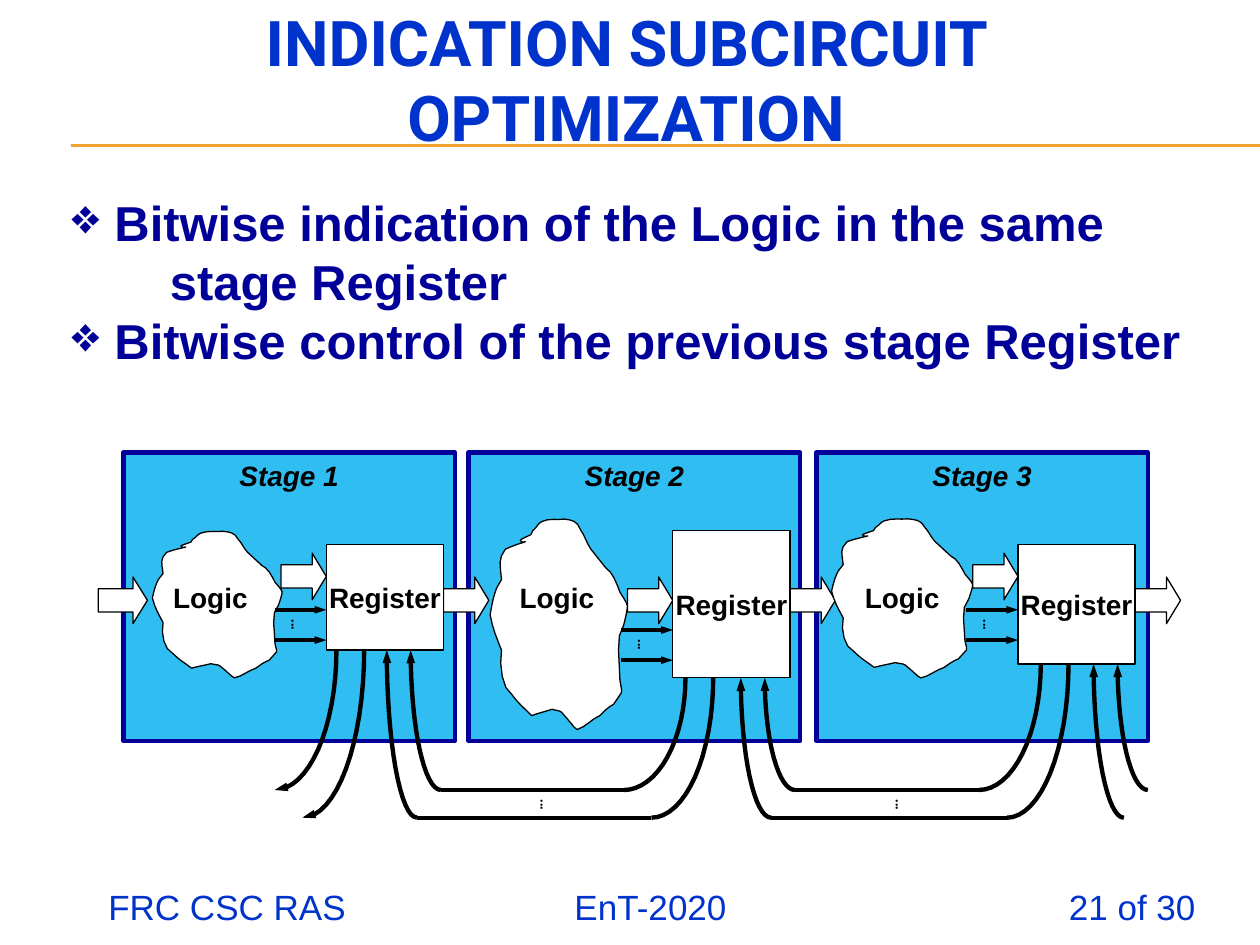
from dataclasses import dataclass
from itertools import pairwise
from math import cos, pi, sin

from lxml.etree import SubElement
from pptx import Presentation
from pptx.dml.color import RGBColor
from pptx.enum.shapes import MSO_CONNECTOR, MSO_SHAPE
from pptx.enum.text import MSO_ANCHOR, PP_ALIGN
from pptx.oxml.ns import qn
from pptx.util import Inches, Pt

Point = tuple[float, float]
Box = tuple[float, float, float, float]

BLACK, WHITE, NAVY, BLUE = "000000", "FFFFFF", "000099", "0033CC"
INNER_Y, OUTER_Y = 6.27, 6.49
OUT_REACH, IN_REACH = 0.49, 0.24
OUT_GAP, IN_GAP = 0.22, 0.19
REGISTER_WIDTH, ARROW_WIDTH, ARROW_HEIGHT = 0.93, 0.36, 0.37
TIGHT = (0.02, 0.01)

CLOUD_BOX = (3.89, 4.11, 1.09, 1.68)
CLOUD_START = (4.17, 4.3)
CLOUD_CURVES = [
    (4.11, 4.32, 4.07, 4.33, 4.01, 4.36), (3.95, 4.44, 3.97, 4.48, 3.98, 4.6),
    (3.96, 4.64, 3.94, 4.66, 3.93, 4.7), (3.91, 4.75, 3.89, 4.88, 3.89, 4.88),
    (3.91, 4.99, 3.94, 5.06, 3.98, 5.16), (3.96, 5.29, 3.99, 5.47, 4.06, 5.51),
    (4.11, 5.58, 4.16, 5.62, 4.22, 5.68), (4.27, 5.66, 4.32, 5.65, 4.38, 5.63),
    (4.45, 5.65, 4.44, 5.63, 4.48, 5.68), (4.5, 5.7, 4.52, 5.73, 4.54, 5.75),
    (4.55, 5.77, 4.58, 5.79, 4.58, 5.79), (4.65, 5.77, 4.69, 5.71, 4.76, 5.68),
    (4.8, 5.64, 4.83, 5.61, 4.87, 5.59), (4.95, 5.46, 4.94, 5.53, 4.92, 5.4),
    (4.92, 5.26, 4.88, 5.05, 4.95, 4.96), (4.96, 4.92, 4.98, 4.84, 4.98, 4.81),
    (4.97, 4.77, 4.93, 4.72, 4.92, 4.7), (4.89, 4.62, 4.86, 4.54, 4.81, 4.51),
    (4.77, 4.46, 4.73, 4.41, 4.69, 4.36), (4.66, 4.32, 4.64, 4.25, 4.61, 4.21),
    (4.58, 4.13, 4.54, 4.13, 4.48, 4.12), (4.42, 4.13, 4.36, 4.11, 4.3, 4.14),
    (4.27, 4.15, 4.26, 4.19, 4.23, 4.21), (4.22, 4.22, 4.22, 4.25, 4.2, 4.25),
    (4.16, 4.27, 4.13, 4.28, 4.13, 4.29), (4.14, 4.31, 4.16, 4.3, 4.17, 4.3),
]


@dataclass
class Stage:
    name: str
    left: float
    cloud: Box
    register_left: float
    register_top: float
    register_height: float
    feed_top: float
    link_y: float
    out_x: float
    in_x: float

    @property
    def register_bottom(self) -> float:
        return self.register_top + self.register_height


STAGES = [
    Stage("Stage 1", 0.98, (1.21, 4.21, 1.03, 1.17), 2.59, 4.32, 0.84, 4.39, 4.84, 2.67, 3.07),
    Stage("Stage 2", 3.72, CLOUD_BOX, 5.34, 4.21, 1.17, 4.58, 5, 5.44, 5.88),
    Stage("Stage 3", 6.48, (6.6, 4.11, 1.12, 1.27), 8.08, 4.32, 0.95, 4.39, 4.84, 8.26, 8.68),
]


def color(value: str) -> RGBColor:
    return RGBColor.from_string(value)


def write(shape, text: str, size: float, ink: str = BLACK, font: str = "Arial",
          bold: bool = True, italic: bool = False, align=PP_ALIGN.CENTER,
          anchor=MSO_ANCHOR.MIDDLE, inset: Point = (0.1, 0.05), wrap: bool = True):
    frame = shape.text_frame
    frame.text = text
    frame.word_wrap = wrap
    frame.vertical_anchor = anchor
    frame.margin_left = frame.margin_right = Inches(inset[0])
    frame.margin_top = frame.margin_bottom = Inches(inset[1])
    for paragraph in frame.paragraphs:
        paragraph.alignment = align
        for run in paragraph.runs:
            run.font.size, run.font.name = Pt(size), font
            run.font.bold, run.font.italic = bold, italic
            run.font.color.rgb = color(ink)
    return frame


def label(slide, box: Box, text: str, size: float, **style):
    return write(slide.shapes.add_textbox(*map(Inches, box)), text, size, **style)


def block(slide, kind, box: Box, fill: str = WHITE, edge: str = BLACK, width: float = 0.75):
    shape = slide.shapes.add_shape(kind, *map(Inches, box))
    shape.shadow.inherit = False
    shape.fill.solid()
    shape.fill.fore_color.rgb = color(fill)
    shape.line.color.rgb = color(edge)
    shape.line.width = Pt(width)
    return shape


def wide_arrow(slide, left: float, top: float, width: float = ARROW_WIDTH) -> None:
    arrow = block(slide, MSO_SHAPE.RIGHT_ARROW, (left, top, width, ARROW_HEIGHT))
    arrow.adjustments[1] = 0.31


def arrowhead(shape, end: str) -> None:
    SubElement(shape.line._get_or_add_ln(), qn(f"a:{end}"), type="triangle", w="sm", len="med")


def segment(slide, start: Point, end: Point, width: float, ink: str = BLACK):
    line = slide.shapes.add_connector(MSO_CONNECTOR.STRAIGHT, *map(Inches, (*start, *end)))
    line.line.color.rgb = color(ink)
    line.line.width = Pt(width)
    SubElement(line._element.spPr, qn("a:effectLst"))
    return line


def outline(slide, points: list[Point], width: float, closed: bool):
    corners = [(Inches(x), Inches(y)) for x, y in points]
    builder = slide.shapes.build_freeform(*corners[0])
    builder.add_line_segments(corners[1:], close=closed)
    shape = builder.convert_to_shape()
    shape.shadow.inherit = False
    shape.line.color.rgb = color(BLACK)
    shape.line.width = Pt(width)
    return shape


def cloud(slide, box: Box) -> None:
    points, start = [CLOUD_START], CLOUD_START
    for ax, ay, bx, by, x, y in CLOUD_CURVES:
        for t in (0.25, 0.5, 0.75, 1):
            weights = ((1 - t) ** 3, 3 * t * (1 - t) ** 2, 3 * t * t * (1 - t), t ** 3)
            points.append((sum(w * v for w, v in zip(weights, (start[0], ax, bx, x))),
                           sum(w * v for w, v in zip(weights, (start[1], ay, by, y)))))
        start = (x, y)
    left, top, width, height = CLOUD_BOX
    scaled = [(box[0] + (x - left) / width * box[2], box[1] + (y - top) / height * box[3])
              for x, y in points]
    shape = outline(slide, scaled, 0.75, True)
    shape.fill.solid()
    shape.fill.fore_color.rgb = color(WHITE)


def bend(slide, foot: Point, top: Point, end: str = "") -> None:
    angles = [step * pi / 32 for step in range(17)]
    points = [(foot[0] + (top[0] - foot[0]) * sin(a), top[1] + (foot[1] - top[1]) * cos(a))
              for a in angles]
    shape = outline(slide, points, 2.5, False)
    shape.fill.background()
    if end:
        arrowhead(shape, end)


def dots(slide, box: Box) -> None:
    frame = label(slide, box, "...", 8, font="Times New Roman", inset=TIGHT)
    frame._txBody.bodyPr.set("vert", "vert")


def tab_stops(paragraph, *stops: tuple[float, str]) -> None:
    tabs = SubElement(paragraph._p.get_or_add_pPr(), qn("a:tabLst"))
    for position, align in stops:
        SubElement(tabs, qn("a:tab"), pos=str(Inches(position)), algn=align)


def draw_stage(slide, stage: Stage) -> None:
    register = stage.register_left
    cloud(slide, stage.cloud)
    label(slide, (register - 1.48, 4.21, 1.12, 1.06), "Logic", 16, inset=TIGHT)
    wide_arrow(slide, register - ARROW_WIDTH, stage.feed_top)
    wide_arrow(slide, register + REGISTER_WIDTH, 4.58)
    box = block(slide, MSO_SHAPE.RECTANGLE,
                (register, stage.register_top, REGISTER_WIDTH, stage.register_height))
    write(box, "Register", 16, inset=TIGHT, wrap=False)
    for y in (stage.link_y, stage.link_y + 0.24):
        arrowhead(segment(slide, (register - 0.41, y), (register, y), 2.25), "tailEnd")
    dots(slide, (register - 0.41, stage.link_y, 0.36, 0.24))
    bottom = stage.register_bottom
    out_head = "headEnd" if stage is STAGES[0] else ""
    for shift, y in ((0, INNER_Y), (OUT_GAP, OUTER_Y)):
        x = stage.out_x + shift
        bend(slide, (x - OUT_REACH, y), (x, bottom), out_head)
    for shift, y in ((0, OUTER_Y), (IN_GAP, INNER_Y)):
        x = stage.in_x + shift
        bend(slide, (x + IN_REACH, y), (x, bottom), "tailEnd")


def draw_feedback(slide, before: Stage, after: Stage) -> None:
    start, end = after.out_x - OUT_REACH, before.in_x + IN_REACH
    segment(slide, (start, INNER_Y), (end + IN_GAP, INNER_Y), 2.5)
    segment(slide, (start + OUT_GAP, OUTER_Y), (end, OUTER_Y), 2.5)
    dots(slide, (start - 0.77, 6.22, 0.31, 0.34))


def main() -> None:
    deck = Presentation()
    deck.slide_width, deck.slide_height = Inches(10), Inches(7.5)
    slide = deck.slides.add_slide(deck.slide_layouts[6])

    for y in (1.15, 1.16):
        segment(slide, (0.56, y), (10, y), 0.75, "F0A22E")
    label(slide, (0.47, 0, 9, 1.25), "INDICATION SUBCIRCUIT OPTIMIZATION", 36,
          ink=BLUE, font="Roboto")
    goals = label(slide, (0.47, 1.48, 9.3, 1.51),
                  "Bitwise indication of the Logic in the same\v\tstage Register\n"
                  "Bitwise control of the previous stage Register",
                  28, ink=NAVY, align=PP_ALIGN.LEFT, anchor=MSO_ANCHOR.TOP)
    for goal in goals.paragraphs:
        properties = goal._p.get_or_add_pPr()
        properties.set("marL", str(Inches(0.34)))
        properties.set("indent", str(-Inches(0.34)))
        SubElement(properties, qn("a:buChar"), char="❖")
        tab_stops(goal, (0.78, "l"))
    footer = label(slide, (0, 6.98, 10, 0.32), "FRC CSC RAS\tEnT-2020\t21 of 30", 20, ink=BLUE,
                   bold=False, align=PP_ALIGN.LEFT, anchor=MSO_ANCHOR.TOP, inset=(0.1, 0.05))
    footer.margin_left = Inches(0.86)
    tab_stops(footer.paragraphs[0], (3.7, "l"), (8.63, "r"))

    for stage in STAGES:
        panel = block(slide, MSO_SHAPE.RECTANGLE, (stage.left, 3.59, 2.63, 2.29),
                      "00B0F0", NAVY, 2.5)
        SubElement(panel._element.spPr.find(".//" + qn("a:srgbClr")), qn("a:alpha"), val="81000")
        write(panel, stage.name, 16, italic=True, anchor=MSO_ANCHOR.TOP)
    wide_arrow(slide, 0.78, 4.58, 0.39)
    for stage in STAGES:
        draw_stage(slide, stage)
    for before, after in pairwise(STAGES):
        draw_feedback(slide, before, after)
    deck.save("out.pptx")


if __name__ == "__main__":
    main()
